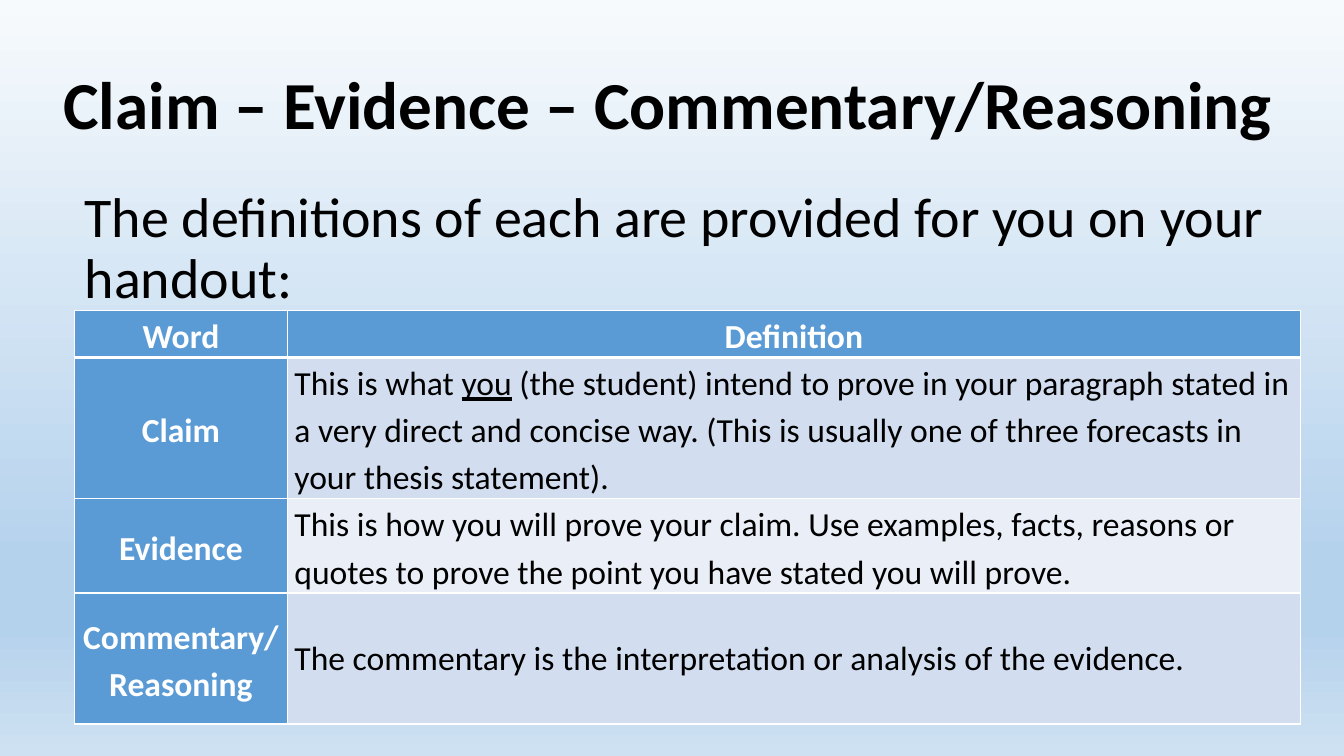
"""Build a slide that defines claim, evidence and commentary in a table."""
from copy import deepcopy
from dataclasses import dataclass

from lxml.etree import SubElement
from pptx import Presentation
from pptx.dml.color import RGBColor
from pptx.enum.text import MSO_ANCHOR as Anchor, MSO_AUTO_SIZE as AutoSize, PP_ALIGN as Align
from pptx.oxml.ns import qn
from pptx.util import Cm, Pt

FONT = "Calibri"
BLACK, WHITE, BLUE = "000000", "FFFFFF", "5B9BD5"
BANDS = ("D2DEEF", "EAEFF7")
BACKGROUND = ((0, "F7FAFD"), (0.74, "B5D2EC"), (0.83, "B5D2EC"), (1, "CEE1F2"))
COLUMN_WIDTHS = (5.36, 25.53)


@dataclass(frozen=True)
class Entry:
    word: str
    definition: tuple[str, ...]
    height: float
    spacing: float = 1.15
    underlined: str = ""


HEADER = Entry("Word", ("Definition",), 1.07)
ENTRIES = (
    Entry("Claim", ("This is what ", "you", " (the student) intend to prove in your paragraph stated in "
                    "a very direct and concise way. (This is usually one of three forecasts in "
                    "your thesis statement)."), 3.3, underlined="you"),
    Entry("Evidence", ("This is how you will prove your claim. Use examples, facts, reasons or "
                       "quotes to prove the point you have stated you will prove.",), 2.18),
    Entry("Commentary/Reasoning",
          ("The commentary is the interpretation or analysis of the evidence.",), 3.3, 1),
)


def color(value: str) -> RGBColor:
    return RGBColor.from_string(value)


def format_paragraph(paragraph, size: float, tint: str, bold: bool, align, spacing: float) -> None:
    font = paragraph.font
    font.name, font.size, font.bold = FONT, Pt(size), bold
    font.color.rgb = color(tint)
    paragraph.alignment = align
    paragraph.line_spacing = spacing


def paint_background(slide) -> None:
    fill = slide.background.fill
    fill.gradient()
    fill.gradient_angle = 270
    stop_list = slide.element.find(".//" + qn("a:gsLst"))
    for _ in range(len(BACKGROUND) - len(stop_list)):
        stop_list.append(deepcopy(stop_list[0]))
    for stop, (position, tint) in zip(fill.gradient_stops, BACKGROUND):
        stop.position = position
        stop.color.rgb = color(tint)


def fill_placeholder(shape, box: tuple[float, ...], text: str, size: float, bold: bool, anchor, align):
    shape.left, shape.top, shape.width, shape.height = map(Cm, box)
    frame = shape.text_frame
    frame.text = text
    frame.auto_size = AutoSize.NONE
    frame.vertical_anchor = anchor
    paragraph = frame.paragraphs[0]
    format_paragraph(paragraph, size, BLACK, bold, align, 0.9)
    return paragraph


def draw_borders(cell, top: float, bottom: float) -> None:
    properties = cell._tc.get_or_add_tcPr()
    for side, width in (("L", 1), ("R", 1), ("T", top), ("B", bottom)):
        line = SubElement(properties, qn(f"a:ln{side}"), w=str(Pt(width)))
        fill = SubElement(line, qn("a:solidFill"))
        SubElement(fill, qn("a:srgbClr"), val=WHITE)


def fill_cell(cell, entry: Entry, texts: tuple[str, ...], fill: str, heading: bool, row: int) -> None:
    draw_borders(cell, 3 if row == 1 else 1, 3 if row == 0 else 1)
    cell.fill.solid()
    cell.fill.fore_color.rgb = color(fill)
    cell.margin_left = cell.margin_right = Cm(0.18)
    cell.margin_top = cell.margin_bottom = 0
    cell.vertical_anchor = Anchor.MIDDLE if row else Anchor.TOP
    paragraph = cell.text_frame.paragraphs[0]
    for text in texts:
        run = paragraph.add_run()
        run.text = text
        if text == entry.underlined:
            run.font.underline = True
    format_paragraph(paragraph, 24, WHITE if heading else BLACK, heading,
                     Align.CENTER if heading else Align.LEFT, 1.15 if heading else entry.spacing)
    if heading:
        paragraph.space_after = Pt(10)


def add_definitions(slide) -> None:
    entries = (HEADER, *ENTRIES)
    height = sum(entry.height for entry in entries)
    table = slide.shapes.add_table(len(entries), len(COLUMN_WIDTHS), Cm(1.88), Cm(7.82),
                                   Cm(sum(COLUMN_WIDTHS)), Cm(height)).table
    table.first_col = True
    for column, width in zip(table.columns, COLUMN_WIDTHS):
        column.width = Cm(width)
    for row, entry in enumerate(entries):
        table.rows[row].height = Cm(entry.height)
        definition_fill = BANDS[(row - 1) % 2] if row else BLUE
        fill_cell(table.cell(row, 0), entry, (entry.word,), BLUE, True, row)
        fill_cell(table.cell(row, 1), entry, entry.definition, definition_fill, row == 0, row)


def main() -> None:
    presentation = Presentation()
    presentation.slide_width, presentation.slide_height = Cm(33.87), Cm(19.05)
    slide = presentation.slides.add_slide(presentation.slide_layouts[0])
    paint_background(slide)
    title, subtitle = slide.placeholders
    fill_placeholder(title, (-1.12, 0.33, 35.92, 3.43), "Claim – Evidence – Commentary/Reasoning",
                     48, True, Anchor.BOTTOM, Align.CENTER)
    introduction = fill_placeholder(
        subtitle, (1.88, 4.65, 31.42, 14.1),
        "The definitions of each are provided for you on your handout:",
        40, False, Anchor.TOP, Align.LEFT)
    introduction.space_before = Pt(10)
    add_definitions(slide)
    presentation.save("out.pptx")


if __name__ == "__main__":
    main()
